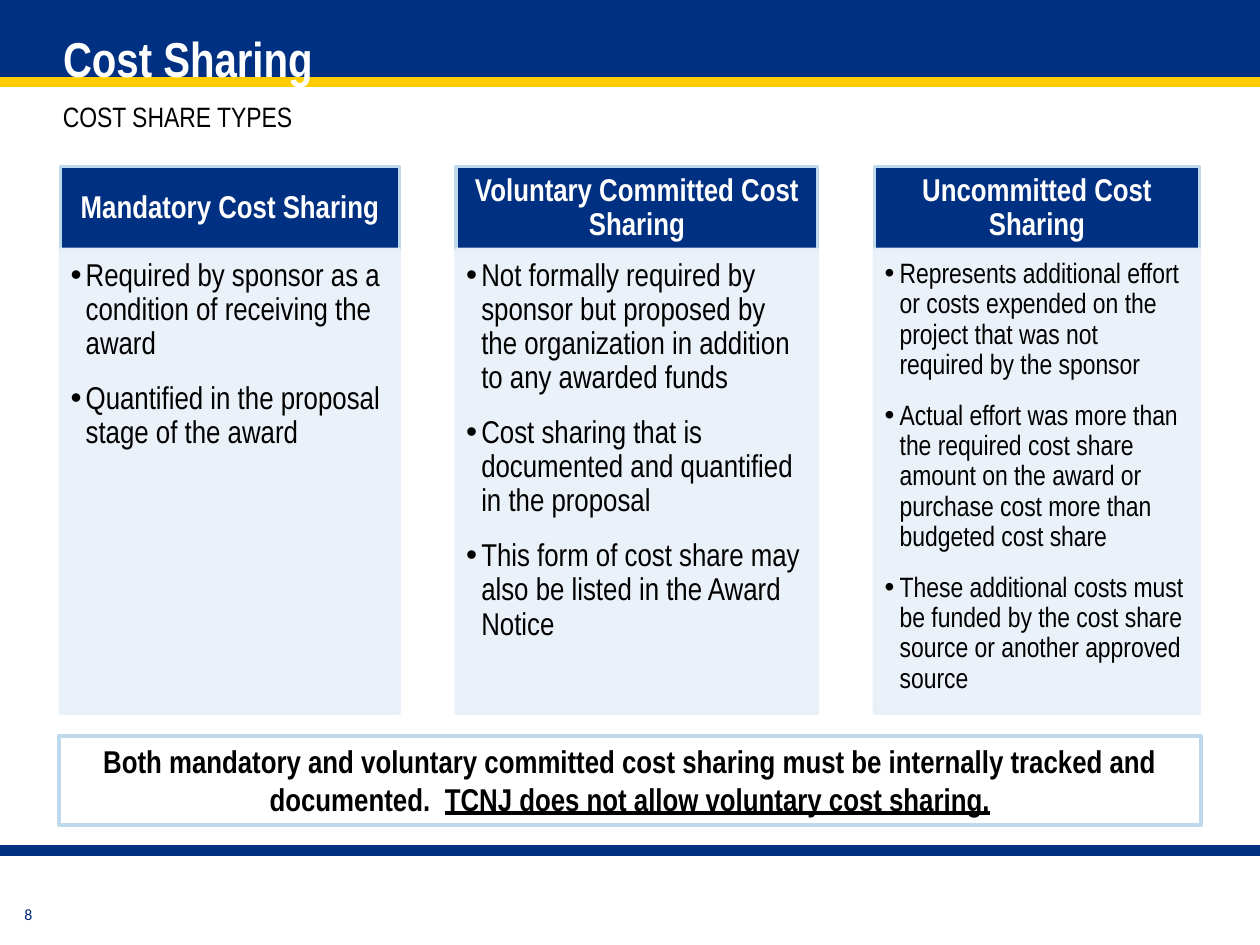
from lxml.etree import SubElement
from pptx import Presentation
from pptx.dml.color import RGBColor
from pptx.enum.shapes import MSO_CONNECTOR, MSO_SHAPE
from pptx.enum.text import MSO_ANCHOR, PP_ALIGN
from pptx.oxml.ns import qn
from pptx.util import Inches, Pt

WIDE, HIGH = 10, 7.5
NAVY, GOLD, SKY, PALE = "003082", "FFCC00", "BED8EC", "E8F0F8"
BLACK, WHITE = "000000", "FFFFFF"
FACE = "Arial Narrow"
TITLE, LEAD, PAGE = "Cost Sharing", "COST SHARE TYPES", "8"
# heading, left, width, bullet size, bullets
TYPES = [
    ("Mandatory Cost Sharing", 0.48, 2.69, 18, [
        "Required by sponsor as a condition of receiving the award",
        "Quantified in the proposal stage of the award"]),
    ("Voluntary Committed Cost Sharing", 3.62, 2.87, 18, [
        "Not formally required by sponsor but proposed by the organization "
        "in addition to any awarded funds",
        "Cost sharing that is documented and quantified in the proposal",
        "This form of cost share may also be listed in the Award Notice"]),
    ("Uncommitted Cost Sharing", 6.94, 2.58, 16, [
        "Represents additional effort or costs expended on the project "
        "that was not required by the sponsor",
        "Actual effort was more than the required cost share amount on the "
        "award or purchase cost more than budgeted cost share",
        "These additional costs must be funded by the cost share source "
        "or another approved source"]),
]
NOTE = [("Both mandatory and voluntary committed cost sharing must be "
         "internally tracked and documented.  ", False),
        ("TCNJ does not allow voluntary cost sharing.", True)]
TOP, HEAD, BODY = 1.32, 0.66, 3.68


def rgb(code):
    return RGBColor.from_string(code)


def style(para, size, color=BLACK, bold=False, face=FACE, align=PP_ALIGN.LEFT):
    para.alignment = align
    font = para.font
    font.name, font.size, font.bold = face, Pt(size), bold
    font.color.rgb = rgb(color)


def inset(frame, left, top, right, bottom):
    frame.margin_left, frame.margin_top = Inches(left), Inches(top)
    frame.margin_right, frame.margin_bottom = Inches(right), Inches(bottom)


def rect(x, y, w, h, fill=None, edge=None, weight=2):
    box = slide.shapes.add_shape(
        MSO_SHAPE.RECTANGLE, Inches(x), Inches(y), Inches(w), Inches(h))
    box.shadow.inherit = False
    if fill:
        box.fill.solid()
        box.fill.fore_color.rgb = rgb(fill)
    else:
        box.fill.background()
    if edge:
        box.line.color.rgb = rgb(edge)
        box.line.width = Pt(weight)
    else:
        box.line.fill.background()
    box.text_frame.word_wrap = True
    return box


def rule(y, color):
    line = slide.shapes.add_connector(
        MSO_CONNECTOR.STRAIGHT, 0, Inches(y), Inches(WIDE), Inches(y))
    line.line.color.rgb = rgb(color)
    line.line.width = Pt(6)
    SubElement(line._element.spPr, qn("a:effectLst"))


def label(text, x, y, w, h):
    box = slide.shapes.add_textbox(Inches(x), Inches(y), Inches(w), Inches(h))
    box.text_frame.text = text
    return box.text_frame


def fade(shape, share):
    """Set the opacity, in percent, of a shape's fill and line."""
    for color in shape._element.spPr.iter(qn("a:srgbClr")):
        SubElement(color, qn("a:alpha"), val=str(share * 1000))


def bullet(para):
    props = para._p.get_or_add_pPr()
    props.set("marL", str(Inches(0.12)))
    props.set("indent", str(-Inches(0.12)))
    SubElement(props, qn("a:buFont"), typeface="Arial")
    SubElement(props, qn("a:buChar"), char="•")


def column(name, x, w, size, items):
    head = rect(x, TOP, w, HEAD, NAVY, SKY).text_frame
    head.text = name
    head.vertical_anchor = MSO_ANCHOR.MIDDLE
    inset(head, 0.11, 0.06, 0.11, 0.06)
    style(head.paragraphs[0], 18, WHITE, True, align=PP_ALIGN.CENTER)
    head.paragraphs[0].line_spacing = 0.9

    box = rect(x, TOP + HEAD, w, BODY, PALE, PALE)
    fade(box, 90)
    body = box.text_frame
    body.text = "\n".join(items)
    body.vertical_anchor = MSO_ANCHOR.TOP
    inset(body, 0.08, 0.08, 0.1, 0.11)
    for para in body.paragraphs:
        bullet(para)
        style(para, size)
        para.line_spacing = 0.9
        para.space_after = Pt(12)


deck = Presentation()
deck.slide_width, deck.slide_height = Inches(WIDE), Inches(HIGH)
slide = deck.slides.add_slide(deck.slide_layouts[5])

rect(0, 0, WIDE, 0.67, NAVY)
rule(0.65, GOLD)
rule(6.75, NAVY)

title = slide.shapes.title
title.left, title.top = Inches(0.4), Inches(0.18)
title.width, title.height = Inches(9.2), Inches(0.56)
title.text_frame.text = TITLE
title.text_frame.vertical_anchor = MSO_ANCHOR.TOP
style(title.text_frame.paragraphs[0], 28, WHITE, True)
# Lift the title above the band
slide.shapes._spTree.append(title._element)

lead = label(LEAD, 0.4, 0.74, 9.2, 0.44)
lead.word_wrap = True
style(lead.paragraphs[0], 16)

page = label(PAGE, 0.1, 7.13, 0.25, 0.24)
inset(page, 0, 0.05, 0, 0.05)
style(page.paragraphs[0], 9, "002A75", face="Calibri", align=PP_ALIGN.CENTER)

for kind in TYPES:
    column(*kind)

note = rect(0.47, 5.84, 9.06, 0.71, edge=SKY, weight=2.25).text_frame
note.vertical_anchor = MSO_ANCHOR.TOP
para = note.paragraphs[0]
style(para, 18, bold=True, align=PP_ALIGN.CENTER)
for text, under in NOTE:
    run = para.add_run()
    run.text = text
    if under:
        run.font.underline = True

deck.save("out.pptx")
